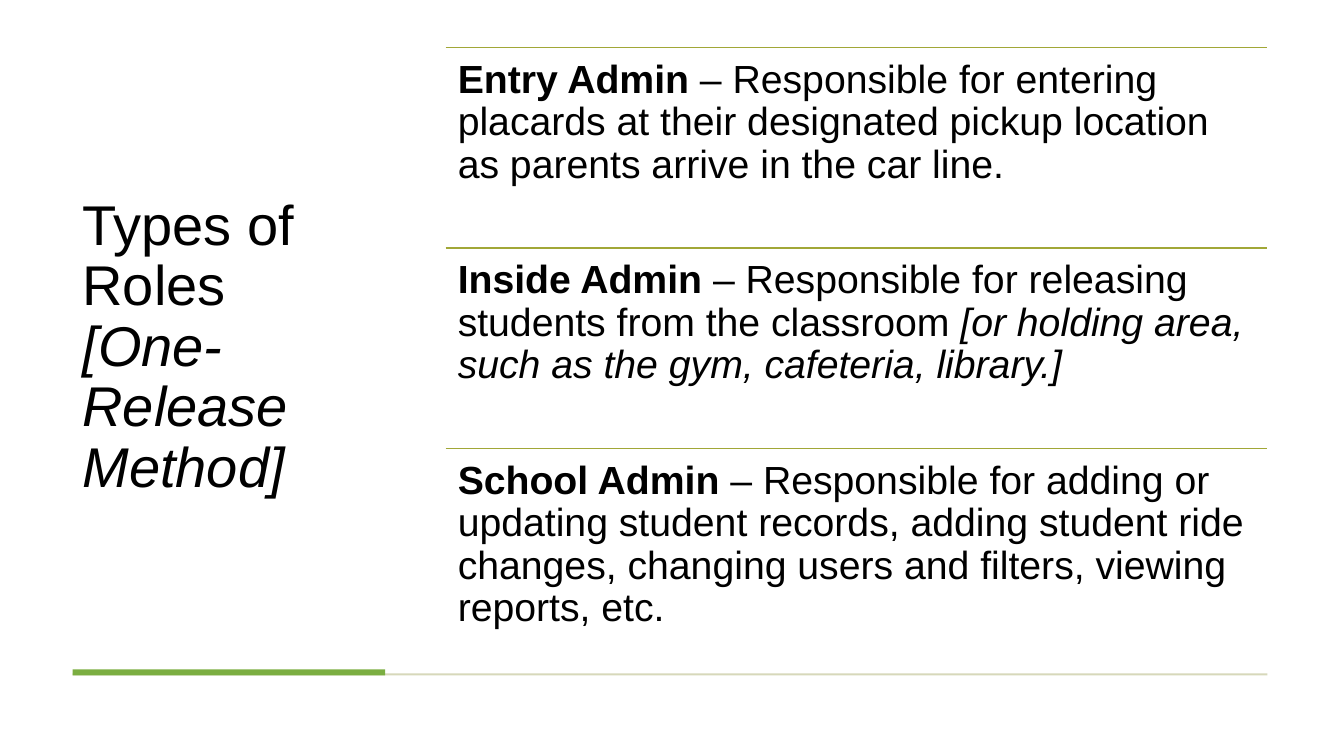
from dataclasses import dataclass

from lxml import etree
from pptx import Presentation
from pptx.dml.color import RGBColor
from pptx.enum.shapes import MSO_CONNECTOR, MSO_SHAPE
from pptx.enum.text import MSO_ANCHOR
from pptx.oxml.ns import qn
from pptx.slide import Slide
from pptx.util import Inches, Pt

RECT = MSO_SHAPE.RECTANGLE
LINE = MSO_CONNECTOR.STRAIGHT
TOP = MSO_ANCHOR.TOP
MIDDLE = MSO_ANCHOR.MIDDLE

COLORS = {"text": "000000", "rule": "A1A737", "base": "D7D8BA", "accent": "7BAE41"}
LEFT, SPLIT, RIGHT = 0.72, 4.42, 12.57
HEAD, STEP = 0.47, 1.99


@dataclass(frozen=True)
class Run:
    text: str
    bold: bool = False
    italic: bool = False


@dataclass(frozen=True)
class Block:
    left: float
    top: float
    width: float
    height: float
    size: int
    anchor: MSO_ANCHOR
    inset: tuple[float, float]
    runs: tuple[Run, ...]


@dataclass(frozen=True)
class Bar:
    left: float
    top: float
    width: float
    height: float
    color: str


ROLES = (
    (
        Run("Entry Admin ", bold=True),
        Run("– Responsible for entering placards at their designated pickup "
            "location as parents arrive in the car line."),
    ),
    (
        Run("Inside Admin ", bold=True),
        Run("– Responsible for releasing students from the classroom "),
        Run("[or holding area, such as the gym, cafeteria, library.]", italic=True),
    ),
    (
        Run("School Admin ", bold=True),
        Run("– Responsible for adding or updating student records, adding student "
            "ride changes, changing users and filters, viewing reports, etc."),
    ),
)
TITLE = Block(LEFT, HEAD, 3.1, 3 * STEP, 40, MIDDLE, (0.1, 0.05),
              (Run("Types of Roles "), Run("[One-Release Method]", italic=True)))
BARS = (
    Bar(LEFT, 6.68, RIGHT - LEFT, 0.02, "base"),
    Bar(LEFT, 6.64, 3.1, 0.06, "accent"),
)


def paint(name: str) -> RGBColor:
    return RGBColor.from_string(COLORS[name])


def add_text(slide: Slide, block: Block) -> None:
    box = slide.shapes.add_textbox(Inches(block.left), Inches(block.top),
                                   Inches(block.width), Inches(block.height))
    frame = box.text_frame
    side, edge = map(Inches, block.inset)
    layout = {"word_wrap": True, "vertical_anchor": block.anchor,
              "margin_left": side, "margin_right": side,
              "margin_top": edge, "margin_bottom": edge}
    for key, value in layout.items():
        setattr(frame, key, value)
    para = frame.paragraphs[0]
    para.line_spacing = 0.9
    for item in block.runs:
        run = para.add_run()
        run.text = item.text
        style = {"name": "Arial", "size": Pt(block.size),
                 "bold": item.bold, "italic": item.italic}
        for key, value in style.items():
            setattr(run.font, key, value)
        run.font.color.rgb = paint("text")


def add_bar(slide: Slide, bar: Bar) -> None:
    shape = slide.shapes.add_shape(RECT, Inches(bar.left), Inches(bar.top),
                                   Inches(bar.width), Inches(bar.height))
    shape.shadow.inherit = False
    shape.fill.solid()
    shape.fill.fore_color.rgb = paint(bar.color)
    shape.line.fill.background()


def add_rule(slide: Slide, top: float) -> None:
    rule = slide.shapes.add_connector(LINE, Inches(SPLIT), Inches(top),
                                      Inches(RIGHT), Inches(top))
    rule.line.color.rgb = paint("rule")
    rule.line.width = Pt(1)
    etree.SubElement(rule._element.spPr, qn("a:effectLst"))


def main() -> None:
    deck = Presentation()
    deck.slide_width, deck.slide_height = Inches(13.33), Inches(7.5)
    slide = deck.slides.add_slide(deck.slide_layouts[6])
    add_text(slide, TITLE)
    for bar in BARS:
        add_bar(slide, bar)
    for row, runs in enumerate(ROLES):
        top = HEAD + row * STEP
        add_rule(slide, top)
        add_text(slide, Block(SPLIT, top, RIGHT - SPLIT, STEP, 28, TOP,
                              (0.12, 0.12), runs))
    deck.save("out.pptx")


if __name__ == "__main__":
    main()
